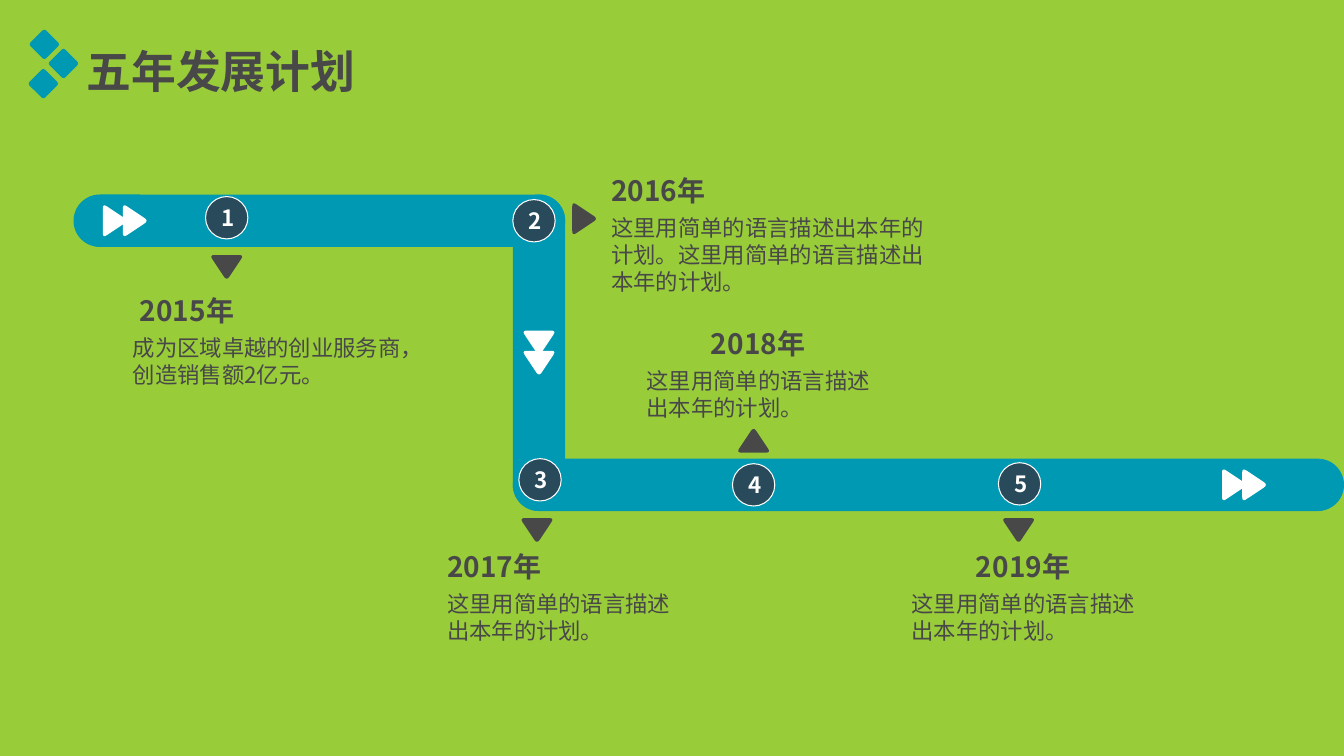
import math

import pptx
import pptx.dml.color
import pptx.enum.shapes
import pptx.enum.text
import pptx.oxml.ns
import pptx.util

Inches, Pt = pptx.util.Inches, pptx.util.Pt
SHAPE = pptx.enum.shapes.MSO_SHAPE
ALIGN = pptx.enum.text.PP_ALIGN
ANCHOR = pptx.enum.text.MSO_ANCHOR

FONT = "Noto Sans CJK SC"
COLORS = {"background": "99CC39", "road": "0099B3", "text": "484849",
          "badge": "294A5A", "white": "FFFFFF"}
TURNS = {"right": 0, "down": 90, "up": -90}
ROAD_WIDTH = 0.52
BADGE_SIZE = 0.42
PLAN = "这里用简单的语言描述出本年的计划。"


def color(name):
    return pptx.dml.color.RGBColor.from_string(COLORS[name])


def lengths(*values):
    return [Inches(value) for value in values]


def write(frame, text, size=16, bold=False, tint="text", align=ALIGN.LEFT,
          anchor=ANCHOR.TOP):
    frame.word_wrap = True
    frame.auto_size = pptx.enum.text.MSO_AUTO_SIZE.NONE
    frame.vertical_anchor = anchor
    paragraph = frame.paragraphs[0]
    paragraph.alignment = align
    paragraph.line_spacing = Pt(round(size * 1.215, 1))
    paragraph.space_before = Pt(0)
    run = paragraph.add_run()
    run.text = text
    run.font.name = FONT
    run.font.size = Pt(size)
    run.font.bold = bold
    run.font.color.rgb = color(tint)
    east_asian = run.font._element.makeelement(pptx.oxml.ns.qn("a:ea"), {"typeface": FONT})
    run.font._element.find(pptx.oxml.ns.qn("a:latin")).addnext(east_asian)


def paint(shape, fill, line=None):
    shape.shadow.inherit = False
    shape.fill.solid()
    shape.fill.fore_color.rgb = color(fill)
    if line:
        shape.line.color.rgb = color(line)
        shape.line.width = Pt(0.75)
    else:
        shape.line.fill.background()


def add_rounded(slide, box, radius, fill, rotation=0):
    rounded = slide.shapes.add_shape(SHAPE.ROUNDED_RECTANGLE, *lengths(*box))
    rounded.adjustments[0] = radius
    rounded.rotation = rotation
    paint(rounded, fill)


def add_pointer(slide, center, direction, fill):
    """Triangle with softened corners, turned about its center."""
    corners = [(-0.12, -0.17), (0.135, 0), (-0.12, 0.17)]
    turn = math.radians(TURNS[direction])
    outline = []
    for i, corner in enumerate(corners):
        ends = []
        for neighbor in (corners[i - 1], corners[(i + 1) % 3]):
            share = 0.05 / math.dist(corner, neighbor)
            ends.append([c + (n - c) * share for c, n in zip(corner, neighbor)])
        for step in range(7):
            t = step / 6
            x, y = [(1 - t) ** 2 * a + 2 * t * (1 - t) * c + t ** 2 * b
                    for a, c, b in zip(ends[0], corner, ends[1])]
            outline.append(lengths(center[0] + x * math.cos(turn) - y * math.sin(turn),
                                   center[1] + x * math.sin(turn) + y * math.cos(turn)))
    builder = slide.shapes.build_freeform(*outline[0], scale=1.0)
    builder.add_line_segments(outline[1:], close=True)
    paint(builder.convert_to_shape(), fill)


def add_header(slide, left, top):
    # Three diamonds beside the title
    side = 0.22
    for x, y in [(0.15, 0.15), (0.34, 0.34), (0.14, 0.54)]:
        add_rounded(slide, (left + x - side / 2, top + y - side / 2, side, side),
                    0.12, "road", 45)
    title = slide.shapes.title
    title.left, title.top, title.width, title.height = lengths(
        left + 0.47, top + 0.09, 3.09, 0.64)
    write(title.text_frame, "五年发展计划", size=32, bold=True)


def add_road(slide, left, top, right, bend, drop):
    # Two level stretches joined by a vertical one
    for box in [(left, top, bend + ROAD_WIDTH - left, ROAD_WIDTH),
                (bend, top, ROAD_WIDTH, drop + ROAD_WIDTH),
                (bend, top + drop, right - bend, ROAD_WIDTH)]:
        add_rounded(slide, box, 0.5, "road")

    # Double arrows along the direction of travel
    middle = ROAD_WIDTH / 2
    for x, y, direction in [(left + 0.41, top + middle, "right"),
                            (bend + middle, top + 1.47, "down"),
                            (right - 1.09, top + drop + middle, "right")]:
        add_pointer(slide, (x, y), direction, "white")
        ahead = (x + 0.2, y) if direction == "right" else (x, y + 0.2)
        add_pointer(slide, ahead, direction, "white")


def add_year(slide, number, badge, pointer, direction, box, plan,
             indent=0, heading_align=ALIGN.LEFT):
    circle = slide.shapes.add_shape(SHAPE.OVAL, *lengths(*badge, BADGE_SIZE, BADGE_SIZE))
    paint(circle, "badge", line="white")
    write(circle.text_frame, str(number), bold=True, tint="white",
          align=ALIGN.CENTER, anchor=ANCHOR.MIDDLE)
    add_pointer(slide, pointer, direction, "text")

    # Heading with the plan below it
    left, top, width, height = box
    heading = slide.shapes.add_textbox(*lengths(left + indent, top, 1.93, 0.44))
    write(heading.text_frame, f"{2014 + number}年", size=20, bold=True, align=heading_align)
    description = slide.shapes.add_textbox(*lengths(left, top + 0.4, width, height))
    write(description.text_frame, plan)


def main():
    deck = pptx.Presentation()
    deck.slide_width, deck.slide_height = lengths(13.34, 7.5)
    slide = deck.slides.add_slide(deck.slide_layouts[5])
    slide.background.fill.solid()
    slide.background.fill.fore_color.rgb = color("background")

    add_header(slide, 0.29, 0.29)
    add_road(slide, left=0.73, top=1.93, right=13.34, bend=5.09, drop=2.62)

    # Number, badge corner, pointer center and direction, text box
    centered = {"indent": 0.24, "heading_align": ALIGN.CENTER}
    add_year(slide, 1, (2.04, 1.95), (2.25, 2.65), "down", (1.22, 2.86, 3.12, 0.64),
             "成为区域卓越的创业服务商，创造销售额2亿元。", indent=0.07)
    add_year(slide, 2, (5.09, 1.98), (5.8, 2.17), "right", (5.97, 1.67, 3.45, 0.91), PLAN * 2)
    add_year(slide, 3, (5.15, 4.55), (5.33, 5.26), "down", (4.34, 5.4, 2.42, 0.64), PLAN)
    add_year(slide, 4, (7.27, 4.6), (7.48, 4.37), "up", (6.32, 3.19, 2.42, 0.64), PLAN, **centered)
    add_year(slide, 5, (9.91, 4.59), (10.11, 5.26), "down", (8.95, 5.4, 2.42, 0.64), PLAN, **centered)

    deck.save("out.pptx")


if __name__ == "__main__":
    main()
